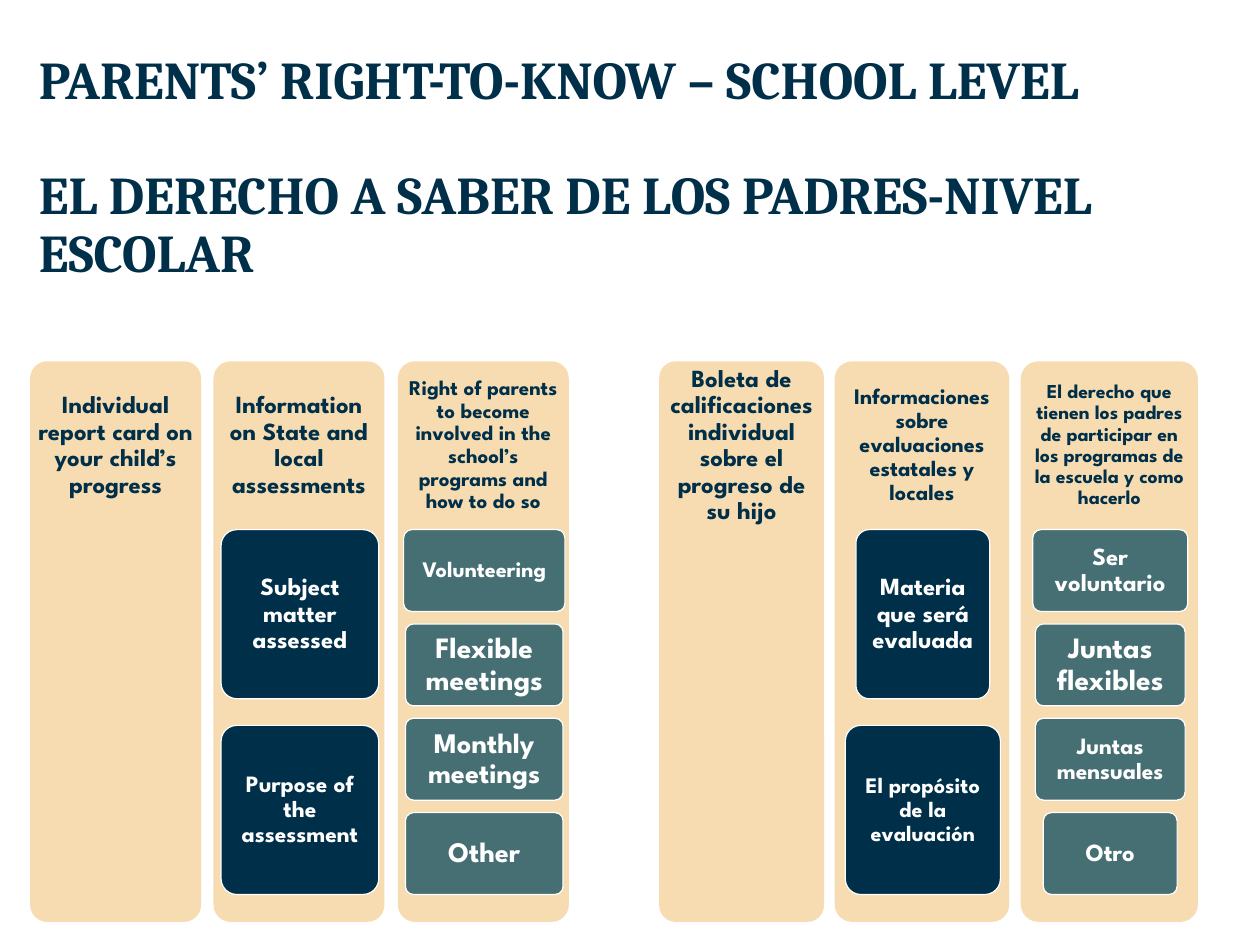
from lxml import etree
from pptx import Presentation
from pptx.dml.color import RGBColor
from pptx.enum.shapes import MSO_SHAPE
from pptx.enum.text import MSO_ANCHOR, PP_ALIGN
from pptx.oxml.ns import qn
from pptx.util import Inches, Pt

ROUNDED = MSO_SHAPE.ROUNDED_RECTANGLE
TOP, MIDDLE = MSO_ANCHOR.TOP, MSO_ANCHOR.MIDDLE
LEFT, CENTER = PP_ALIGN.LEFT, PP_ALIGN.CENTER
COLORS = {"navy": "002F4A", "teal": "456F73", "sand": "EEB04F", "white": "FFFFFF"}

PANEL_TOP, PANEL_H, HEADING_H = 4.08, 6.33, 1.9
CARDS_TOP, CARDS_H = 5.98, 4.12

COLUMNS = [
    (0.34, 1.93, 0.08, "Individual report card on your child’s progress", 20, "navy", 0, []),
    (2.41, 1.93, 0.08, "Information on State and local assessments", 20, "navy", 0.3, [
        (1.78, "Subject matter assessed", 20),
        (1.78, "Purpose of the assessment", 19)]),
    (4.49, 1.93, 0.07,
     "Right of parents to become involved in the school’s programs and how to do so",
     17, "teal", 0.14, [
         (1.82, "Volunteering", 18),
         (1.78, "Flexible meetings", 24),
         (1.78, "Monthly meetings", 23),
         (1.78, "Other", 23)]),
    (7.44, 1.86, 0.08, "Boleta de calificaciones individual sobre el progreso de su hijo",
     20, "navy", 0, []),
    (9.42, 1.97, 0.07, "Informaciones sobre evaluaciones estatales y locales", 18, "navy", 0.3, [
        (1.51, "Materia que será evaluada", 20),
        (1.75, "El propósito de la evaluación", 18)]),
    (11.52, 2, 0.07,
     "El derecho que tienen los padres de participar en los programas de la escuela y como hacerlo",
     16, "teal", 0.14, [
         (1.75, "Ser voluntario", 20),
         (1.69, "Juntas flexibles", 24),
         (1.69, "Juntas mensuales", 19),
         (1.51, "Otro", 20)]),
]


def add_text(shape, lines, size, color, font, inset_x, inset_y, anchor, align):
    tf = shape.text_frame
    tf.word_wrap = True
    tf.vertical_anchor = anchor
    tf.margin_left = tf.margin_right = Inches(inset_x)
    tf.margin_top = tf.margin_bottom = Inches(inset_y)
    for i, line in enumerate(lines):
        p = tf.add_paragraph() if i else tf.paragraphs[0]
        p.alignment = align
        p.line_spacing = 0.9
        p.space_before = Pt(46.7 if i else 0)
        r = p.add_run()
        r.text = line
        r.font.size = Pt(size)
        r.font.name = font
        r.font.bold = True
        r.font.color.rgb = RGBColor.from_string(COLORS[color])


def add_rounded(s, x, y, w, h, color):
    sp = s.shapes.add_shape(ROUNDED, Inches(x), Inches(y), Inches(w), Inches(h))
    sp.adjustments[0] = 0.1
    sp.shadow.inherit = False
    sp.fill.solid()
    sp.fill.fore_color.rgb = RGBColor.from_string(COLORS[color])
    return sp


prs = Presentation()
prs.slide_width, prs.slide_height = Inches(14.22), Inches(10.67)
s = prs.slides.add_slide(prs.slide_layouts[6])

title = s.shapes.add_textbox(Inches(0.34), Inches(0.58), Inches(13.19), Inches(2.7))
add_text(title, ["PARENTS’ RIGHT-TO-KNOW – SCHOOL LEVEL",
                 "EL DERECHO A SABER DE LOS PADRES-NIVEL ESCOLAR"],
         43.2, "navy", "Cambria", 0.1, 0.03, TOP, LEFT)

for x, w, inset, heading, size, card_color, gap, cards in COLUMNS:
    panel = add_rounded(s, x, PANEL_TOP, w, PANEL_H, "sand")
    panel.line.fill.background()
    srgb = panel.fill._xPr.find(qn("a:solidFill")).find(qn("a:srgbClr"))
    etree.SubElement(srgb, qn("a:alpha"), val="44000")

    box = s.shapes.add_textbox(Inches(x), Inches(PANEL_TOP), Inches(w), Inches(HEADING_H))
    add_text(box, [heading], size, "navy", "League Spartan", inset, inset, MIDDLE, CENTER)

    for i, (card_w, label, label_size) in enumerate(cards):
        card_h = (CARDS_H - gap * (len(cards) - 1)) / len(cards)
        card_x = x + (w - card_w) / 2 + 0.01
        card = add_rounded(s, card_x, CARDS_TOP + i * (card_h + gap), card_w, card_h, card_color)
        card.line.color.rgb = RGBColor.from_string(COLORS["white"])
        card.line.width = Pt(1)
        add_text(card, [label], label_size, "white", "League Spartan", 0.1, 0.1, MIDDLE, CENTER)

prs.save("out.pptx")
